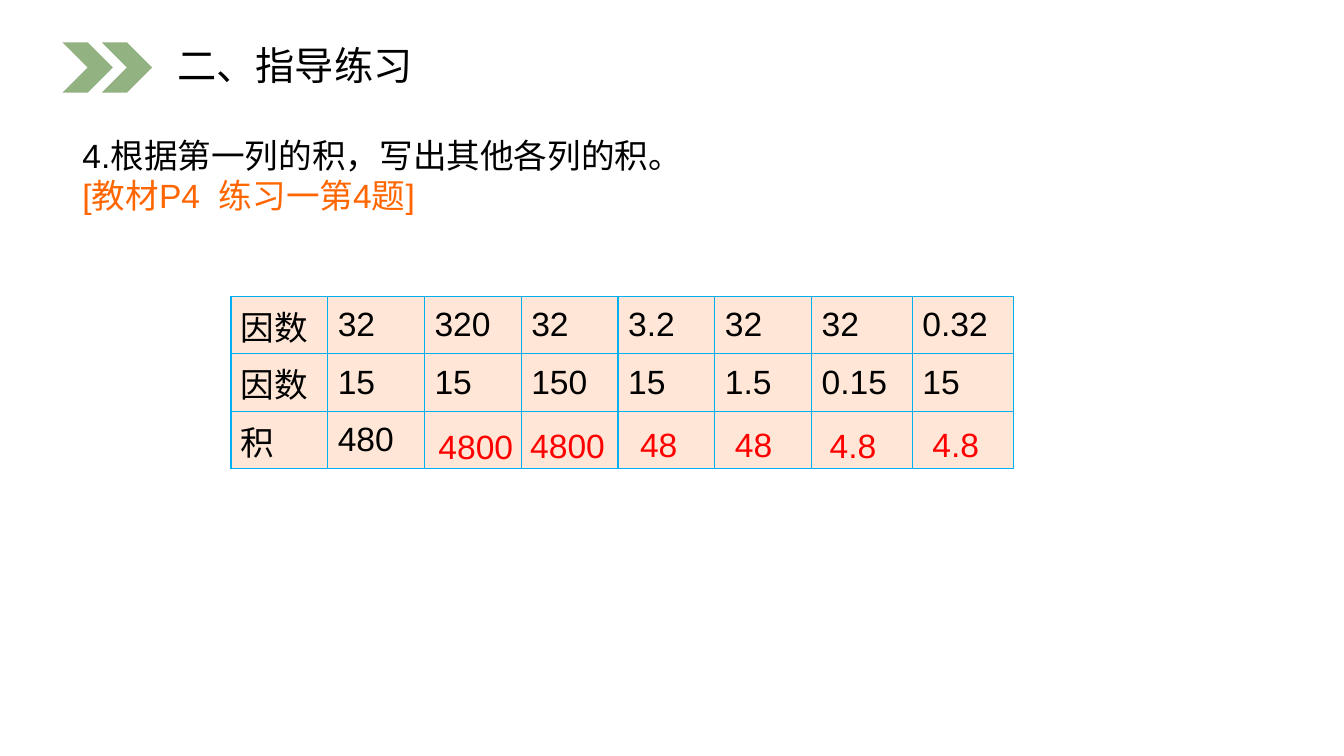
from pptx import Presentation
from pptx.dml.color import RGBColor
from pptx.enum.shapes import MSO_SHAPE
from pptx.enum.text import MSO_ANCHOR, MSO_AUTO_SIZE, PP_ALIGN
from pptx.oxml import parse_xml
from pptx.oxml.ns import nsdecls
from pptx.util import Inches, Pt

BLACK = RGBColor(0x00, 0x00, 0x00)
GREEN = RGBColor(0x92, 0xB2, 0x82)
ORANGE = RGBColor(0xFF, 0x66, 0x00)
RED = RGBColor(0xFF, 0x00, 0x00)
PEACH = RGBColor(0xFF, 0xE6, 0xD6)
BLUE = RGBColor(0x00, 0xB0, 0xF0)


def style(para, color, size=24):
    for run in para.runs:
        run.font.name = "Arial"
        run.font.size = Pt(size)
        run.font.color.rgb = color


def frame(cell):
    """Give all four sides of a table cell a thin blue line."""
    props = cell._tc.get_or_add_tcPr()
    for side in ("lnL", "lnR", "lnT", "lnB"):
        props.append(parse_xml(
            f'<a:{side} {nsdecls("a")} w="{Pt(1)}"><a:solidFill>'
            f'<a:srgbClr val="{BLUE}"/></a:solidFill></a:{side}>'))


deck = Presentation()
deck.slide_width = Inches(13.33)
deck.slide_height = Inches(7.5)
slide = deck.slides.add_slide(deck.slide_layouts[5])
shapes = slide.shapes

# Heading
for left in (0.62, 1.01):
    arrow = shapes.add_shape(MSO_SHAPE.CHEVRON, Inches(left), Inches(0.42),
                             Inches(0.5), Inches(0.5))
    arrow.shadow.inherit = False
    arrow.fill.solid()
    arrow.fill.fore_color.rgb = GREEN
    arrow.line.fill.background()

title = shapes.title
title.left, title.top = Inches(1.66), Inches(0.44)
title.width, title.height = Inches(5.59), Inches(0.46)
title.text_frame.text = "二、指导练习"
title.text_frame.auto_size = MSO_AUTO_SIZE.NONE
title.text_frame.vertical_anchor = MSO_ANCHOR.MIDDLE
para = title.text_frame.paragraphs[0]
para.alignment = PP_ALIGN.LEFT
para.line_spacing = 0.9
style(para, BLACK, 28)

# Task
task = shapes.add_textbox(Inches(0.72), Inches(1.29), Inches(11.33), Inches(0.91))
task.text_frame.word_wrap = True
task.text_frame.text = "4.根据第一列的积，写出其他各列的积。\n[教材P4  练习一第4题]"
for para, color in zip(task.text_frame.paragraphs, (BLACK, ORANGE)):
    para.alignment = PP_ALIGN.JUSTIFY
    style(para, color)

# Table of factors and products
rows = [
    ["因数", "32", "320", "32", "3.2", "32", "32", "0.32"],
    ["因数", "15", "15", "150", "15", "1.5", "0.15", "15"],
    ["积", "480", "", "", "", "", "", ""],
]
widths = [0.96] * 6 + [1.0] * 2
table = shapes.add_table(len(rows), len(widths), Inches(2.29), Inches(2.94),
                         Inches(sum(widths)), Inches(1.71)).table
table.first_row = False
table.horz_banding = False
for col, width in zip(table.columns, widths):
    col.width = Inches(width)
for row, texts in zip(table.rows, rows):
    row.height = Inches(0.57)
    for cell, text in zip(row.cells, texts):
        frame(cell)
        cell.fill.solid()
        cell.fill.fore_color.rgb = PEACH
        cell.vertical_anchor = MSO_ANCHOR.MIDDLE
        cell.text_frame.text = text
        style(cell.text_frame.paragraphs[0], BLACK)

# Answers
answers = [
    ("4800", 4.25, 4.18, 1.08),
    ("4800", 5.16, 4.17, 1.08),
    ("48", 6.25, 4.16, 0.79),
    ("48", 7.19, 4.16, 0.79),
    ("4.8", 8.13, 4.17, 0.79),
    ("4.8", 9.15, 4.16, 0.79),
]
for text, left, top, width in answers:
    box = shapes.add_textbox(Inches(left), Inches(top), Inches(width), Inches(0.76))
    box.text_frame.word_wrap = True
    box.text_frame.text = text
    para = box.text_frame.paragraphs[0]
    para.space_before = Pt(12)
    style(para, RED)

deck.save("out.pptx")
